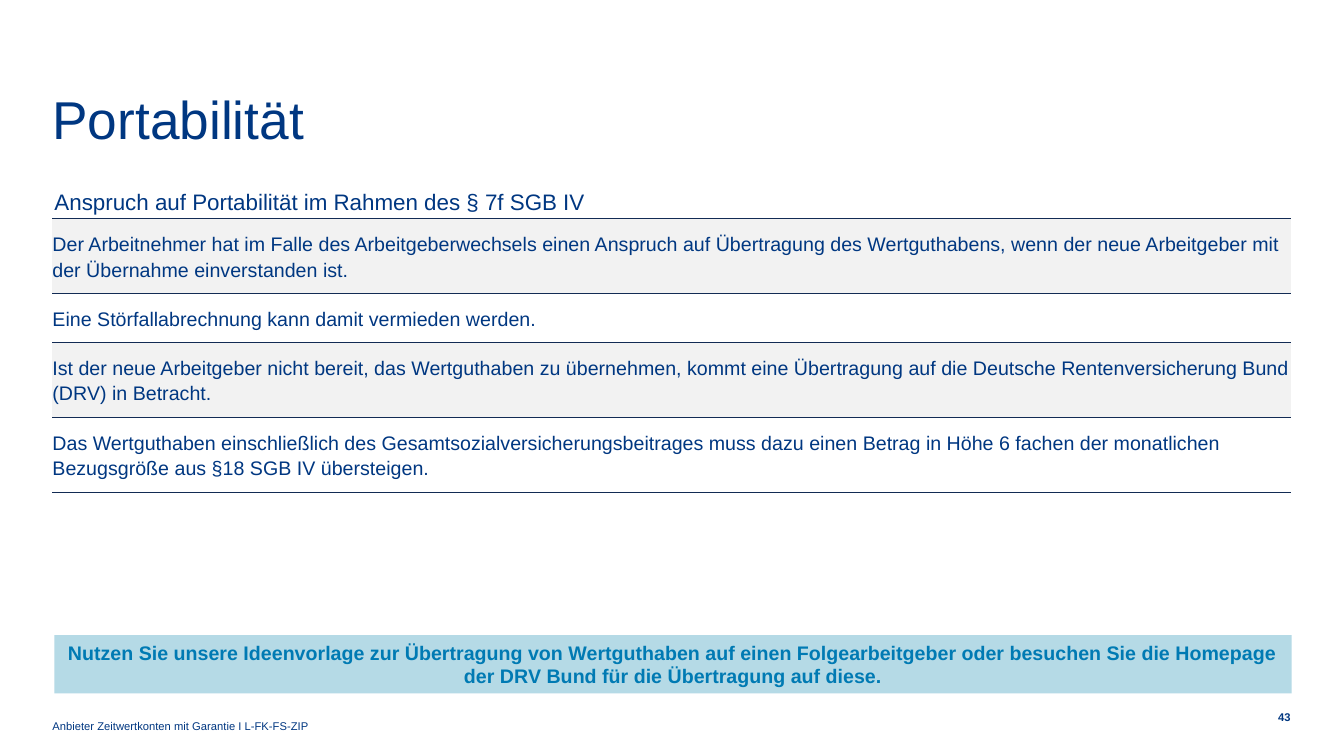
from dataclasses import dataclass

from lxml.etree import SubElement
from pptx import Presentation
from pptx.dml.color import RGBColor
from pptx.enum.shapes import MSO_SHAPE
from pptx.enum.text import MSO_ANCHOR, MSO_AUTO_SIZE, PP_ALIGN
from pptx.oxml.ns import qn
from pptx.util import Inches, Pt


@dataclass(frozen=True)
class Theme:
    font: str = "Arial"
    navy: str = "003781"
    rule: str = "122B54"
    band: str = "F2F2F2"
    callout: str = "B5DAE6"
    callout_text: str = "007AB3"
    title_size: int = 38
    subtitle_size: int = 16
    body_size: int = 14
    footer_size: int = 8


THEME = Theme()


def write(frame, text, size, color=THEME.navy, bold=False, align=PP_ALIGN.LEFT,
          anchor=MSO_ANCHOR.TOP, spacing=None):
    frame.word_wrap = True
    frame.vertical_anchor = anchor
    frame.margin_left = frame.margin_right = 0
    frame.margin_top = frame.margin_bottom = 0
    paragraph = frame.paragraphs[0]
    paragraph.text = text
    paragraph.alignment = align
    paragraph.line_spacing = spacing
    font = paragraph.runs[0].font
    font.name, font.size, font.bold = THEME.font, Pt(size), bold
    font.color.rgb = RGBColor.from_string(color)


def set_borders(cell, top_width):
    """Draw rules above and below the cell and none at its sides."""
    properties = cell._tc.get_or_add_tcPr()
    for side, width in (("L", 0), ("R", 0), ("T", top_width), ("B", 0.5)):
        line = SubElement(properties, qn(f"a:ln{side}"), w=str(Pt(width)))
        if width:
            fill = SubElement(line, qn("a:solidFill"))
            SubElement(fill, qn("a:srgbClr"), val=THEME.rule)
        else:
            SubElement(line, qn("a:noFill"))


presentation = Presentation()
presentation.slide_width, presentation.slide_height = Inches(13.33), Inches(7.5)
slide = presentation.slides.add_slide(presentation.slide_layouts[5])
shapes = slide.shapes

title = shapes.title
title.left, title.top = Inches(0.52), Inches(0.96)
title.width, title.height = Inches(10.2), Inches(1.02)
title.text_frame.auto_size = MSO_AUTO_SIZE.NONE
write(title.text_frame, "Portabilität", THEME.title_size, spacing=Pt(38))

subtitle = shapes.add_textbox(Inches(0.54), Inches(1.87), Inches(11.58), Inches(0.28))
write(subtitle.text_frame, "Anspruch auf Portabilität im Rahmen des § 7f SGB IV",
      THEME.subtitle_size)

# Each statement with the number of lines it takes
statements = [
    ("Der Arbeitnehmer hat im Falle des Arbeitgeberwechsels einen Anspruch auf "
     "Übertragung des Wertguthabens, wenn der neue Arbeitgeber mit der Übernahme "
     "einverstanden ist.", 2),
    ("Eine Störfallabrechnung kann damit vermieden werden.", 1),
    ("Ist der neue Arbeitgeber nicht bereit, das Wertguthaben zu übernehmen, kommt "
     "eine Übertragung auf die Deutsche Rentenversicherung Bund (DRV) in Betracht.", 2),
    ("Das Wertguthaben einschließlich des Gesamtsozialversicherungsbeitrages muss "
     "dazu einen Betrag in Höhe 6 fachen der monatlichen Bezugsgröße aus §18 SGB IV "
     "übersteigen.", 2),
]
padding = Inches(0.12)
line_height = Pt(18)
claims = shapes.add_table(len(statements), 1, Inches(0.52), Inches(2.17),
                          Inches(12.28), Inches(2.69)).table
claims.first_row = claims.horz_banding = False
for index, (statement, line_count) in enumerate(statements):
    claims.rows[index].height = line_count * line_height + 2 * padding
    cell = claims.cell(index, 0)
    write(cell.text_frame, statement, THEME.body_size, spacing=line_height)
    cell.vertical_anchor = MSO_ANCHOR.MIDDLE
    cell.margin_left = cell.margin_right = 0
    cell.margin_top = cell.margin_bottom = padding
    set_borders(cell, top_width=0.5 if index else 1)
    if index % 2 == 0:
        cell.fill.solid()
        cell.fill.fore_color.rgb = RGBColor.from_string(THEME.band)
    else:
        cell.fill.background()

callout = shapes.add_shape(MSO_SHAPE.RECTANGLE, Inches(0.54), Inches(6.3),
                           Inches(12.27), Inches(0.58))
callout.shadow.inherit = False
callout.fill.solid()
callout.fill.fore_color.rgb = RGBColor.from_string(THEME.callout)
callout.line.fill.background()
write(callout.text_frame,
      "Nutzen Sie unsere Ideenvorlage zur Übertragung von Wertguthaben auf einen "
      "Folgearbeitgeber oder besuchen Sie die Homepage der DRV Bund für die "
      "Übertragung auf diese.",
      THEME.body_size, color=THEME.callout_text, bold=True,
      align=PP_ALIGN.CENTER, anchor=MSO_ANCHOR.MIDDLE)

footer = shapes.add_textbox(Inches(0.52), Inches(6.89), Inches(10.2), Inches(0.38))
write(footer.text_frame, "Anbieter Zeitwertkonten mit Garantie I L-FK-FS-ZIP",
      THEME.footer_size, anchor=MSO_ANCHOR.BOTTOM, spacing=0.9)

page_number = shapes.add_textbox(Inches(12.51), Inches(7.03), Inches(0.29), Inches(0.16))
write(page_number.text_frame, "43", THEME.footer_size, bold=True,
      align=PP_ALIGN.RIGHT, anchor=MSO_ANCHOR.MIDDLE, spacing=Pt(10))

presentation.save("out.pptx")
